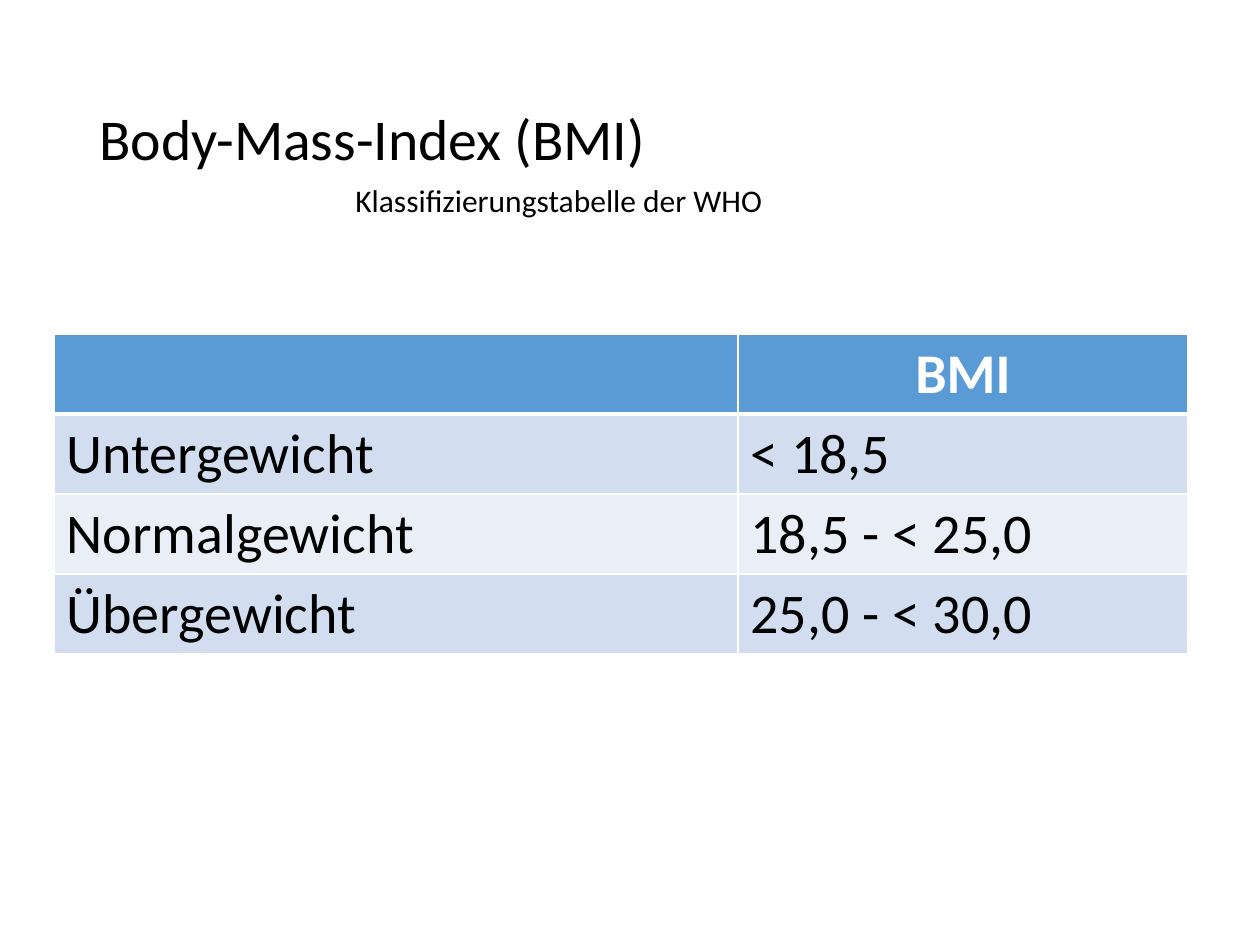
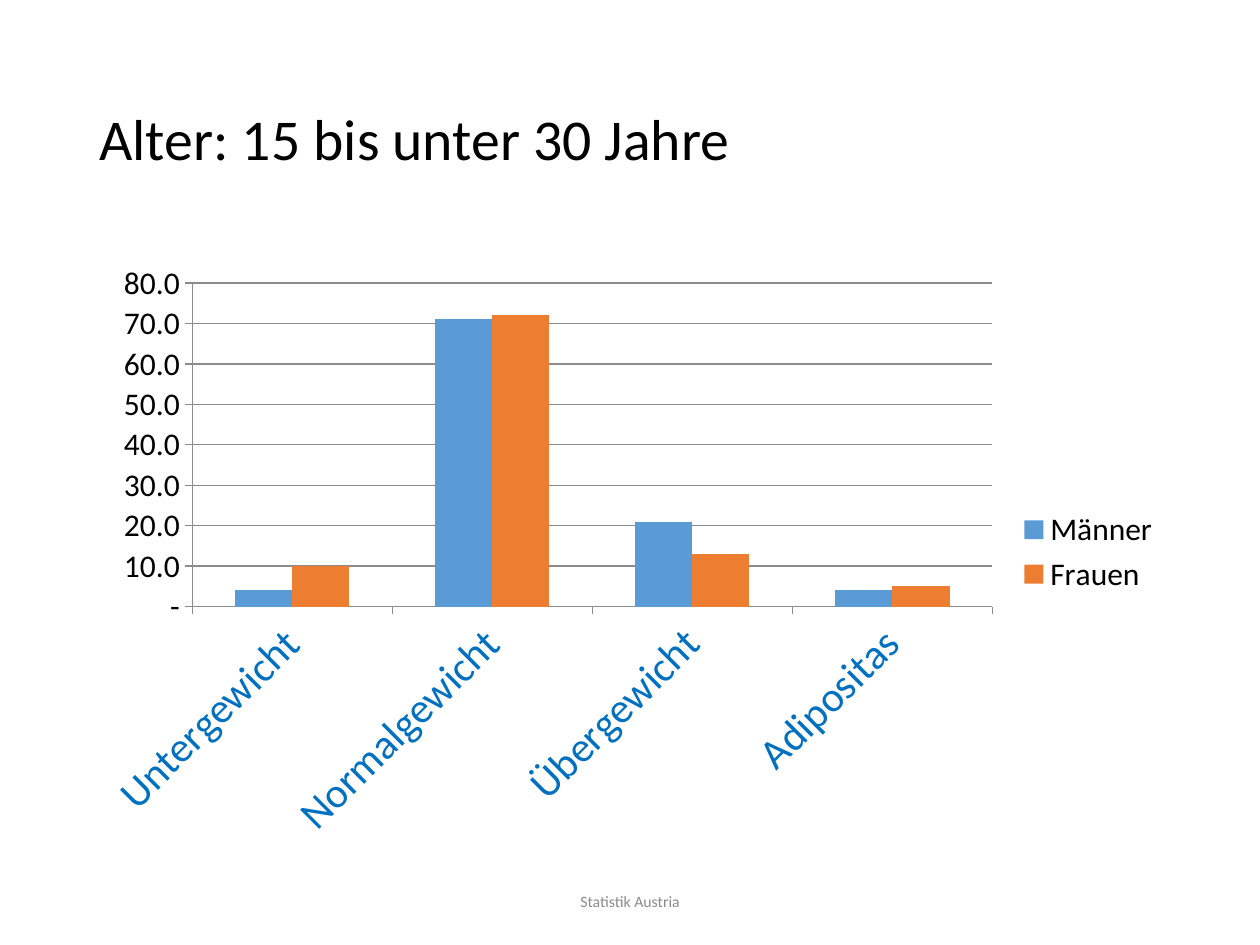
"""Builds two slides on the body mass index: a WHO table and a chart by sex."""
from dataclasses import dataclass

from lxml.etree import SubElement
from pptx import Presentation
from pptx.chart.data import CategoryChartData
from pptx.dml.color import RGBColor
from pptx.enum.chart import XL_CHART_TYPE, XL_LEGEND_POSITION, XL_TICK_MARK
from pptx.enum.text import MSO_ANCHOR, PP_ALIGN
from pptx.oxml.ns import qn
from pptx.util import Emu, Pt


@dataclass(frozen=True)
class Theme:
    """Colours, font and type sizes of the deck."""
    font: str = "Calibri"
    black: str = "000000"
    white: str = "FFFFFF"
    grey: str = "8C8C8C"
    label_blue: str = "0070C0"
    blue: str = "5B9BD5"
    orange: str = "ED7D31"
    bands: tuple = ("D2DEEF", "EAEFF7")
    title: int = 33
    table: int = 32
    category: int = 24
    body: int = 18
    footer: int = 9


THEME = Theme()
SLIDE_SIZE = (1260, 945)
TITLE_BOX = (87, 50, 1086, 183)
SUBTITLE_BOX = (343, 175, 615, 50)
TABLE_ORIGIN = (54, 334)
COLUMN_WIDTHS = (684, 450)
ROW_HEIGHT = 80
CHART_BOX = (87, 252, 1086, 600)
FOOTER_BOX = (417, 876, 426, 50)

TABLE_TITLE = "Body-Mass-Index (BMI)"
TABLE_SUBTITLE = "Klassifizierungstabelle der WHO"
TABLE_ROWS = [
    ("", "BMI"),
    ("Untergewicht", "< 18,5"),
    ("Normalgewicht", "18,5 - < 25,0"),
    ("Übergewicht", "25,0 - < 30,0"),
]
CHART_TITLE = "Alter: 15 bis unter 30 Jahre"
CATEGORIES = ("Untergewicht", "Normalgewicht", "Übergewicht", "Adipositas")
SERIES = [
    ("Männer", (4, 71, 21, 4), THEME.blue),
    ("Frauen", (10, 72, 13, 5), THEME.orange),
]
VALUE_FORMAT = '#,##0.0;#,##0.0;"-"'
FOOTER = "Statistik Austria"


def px(length):
    """Turn px into EMU."""
    return Emu(round(length * 914400 / 126))


def rgb(code):
    """Turn a hex code into a colour."""
    return RGBColor.from_string(code)


def style_font(font, size, color, bold=False):
    """Set face, size, colour and weight."""
    font.name = THEME.font
    font.size = Pt(size)
    font.color.rgb = rgb(color)
    font.bold = bold


def write(para, text, size, color=THEME.black, bold=False, align=PP_ALIGN.LEFT):
    """Add one styled run to a paragraph."""
    para.alignment = align
    span = para.add_run()
    span.text = text
    style_font(span.font, size, color, bold)


def add_text(page, place, text, size, color=THEME.black,
             align=PP_ALIGN.LEFT, anchor=MSO_ANCHOR.MIDDLE):
    """Add a wrapped text box and return its paragraph."""
    box = page.shapes.add_textbox(*map(px, place))
    frame = box.text_frame
    frame.word_wrap = True
    frame.vertical_anchor = anchor
    para = frame.paragraphs[0]
    write(para, text, size, color, align=align)
    return para


def add_page(deck, title):
    """Add a blank slide with the shared title."""
    page = deck.slides.add_slide(deck.slide_layouts[6])
    add_text(page, TITLE_BOX, title, THEME.title).line_spacing = 0.9
    return page


def border_cell(cell, edges):
    """Draw white cell edges of the given widths in points."""
    properties = cell._tc.get_or_add_tcPr()
    for place, (edge, width) in enumerate(edges.items()):
        line = properties.makeelement(qn(f"a:{edge}"), {"w": str(Pt(width))})
        fill = SubElement(line, qn("a:solidFill"))
        SubElement(fill, qn("a:srgbClr"), val=THEME.white)
        properties.insert(place, line)


def add_bmi_table(page):
    """Add the classification table with header and bands."""
    size = (sum(COLUMN_WIDTHS), ROW_HEIGHT * len(TABLE_ROWS))
    table = page.shapes.add_table(len(TABLE_ROWS), len(COLUMN_WIDTHS),
                                  *map(px, TABLE_ORIGIN + size)).table
    table.horz_banding = False
    for column, width in zip(table.columns, COLUMN_WIDTHS):
        column.width = px(width)
    for row_index, texts in enumerate(TABLE_ROWS):
        header = row_index == 0
        table.rows[row_index].height = px(ROW_HEIGHT)
        fill = THEME.blue if header else THEME.bands[(row_index - 1) % 2]
        edges = {"lnL": 1, "lnR": 1, "lnT": 3 if row_index == 1 else 1,
                 "lnB": 3 if header else 1}
        for column_index, text in enumerate(texts):
            cell = table.cell(row_index, column_index)
            cell.fill.solid()
            cell.fill.fore_color.rgb = rgb(fill)
            border_cell(cell, edges)
            if text:
                write(cell.text_frame.paragraphs[0], text, THEME.table,
                      THEME.white if header else THEME.black, header,
                      PP_ALIGN.CENTER if header else PP_ALIGN.LEFT)


def add_weight_chart(page):
    """Add the clustered columns by weight class and sex."""
    data = CategoryChartData(number_format="General")
    data.categories = CATEGORIES
    for name, values, _ in SERIES:
        data.add_series(name, values)
    chart = page.shapes.add_chart(XL_CHART_TYPE.COLUMN_CLUSTERED,
                                  *map(px, CHART_BOX), data).chart
    style_font(chart.font, THEME.body, THEME.black)
    chart.has_title = False
    chart.has_legend = True
    chart.legend.position = XL_LEGEND_POSITION.RIGHT
    chart.legend.include_in_layout = False

    plot = chart.plots[0]
    plot.gap_width = 150
    plot.overlap = 0
    plot.vary_by_categories = False
    for series, (_, _, color) in zip(plot.series, SERIES):
        series.format.fill.solid()
        series.format.fill.fore_color.rgb = rgb(color)

    classes, scale = chart.category_axis, chart.value_axis
    scale.minimum_scale, scale.maximum_scale, scale.major_unit = 0, 80, 10
    scale.has_major_gridlines = True
    scale.tick_labels.number_format = VALUE_FORMAT
    scale.tick_labels.number_format_is_linked = False
    for axis in (classes, scale):
        axis.major_tick_mark = XL_TICK_MARK.OUTSIDE
        axis.minor_tick_mark = XL_TICK_MARK.NONE
    for part in (classes, scale, scale.major_gridlines):
        part.format.line.color.rgb = rgb(THEME.grey)
        part.format.line.width = Pt(0.75)
    style_font(classes.tick_labels.font, THEME.category, THEME.label_blue)
    label_body = classes._element.find(qn("c:txPr")).find(qn("a:bodyPr"))
    label_body.set("rot", str(-45 * 60000))


def main():
    """Build and save the deck."""
    deck = Presentation()
    deck.slide_width, deck.slide_height = map(px, SLIDE_SIZE)

    page = add_page(deck, TABLE_TITLE)
    add_bmi_table(page)
    add_text(page, SUBTITLE_BOX, TABLE_SUBTITLE, THEME.body, anchor=MSO_ANCHOR.TOP)

    page = add_page(deck, CHART_TITLE)
    add_weight_chart(page)
    add_text(page, FOOTER_BOX, FOOTER, THEME.footer, THEME.grey, PP_ALIGN.CENTER)

    deck.save("out.pptx")


if __name__ == "__main__":
    main()
